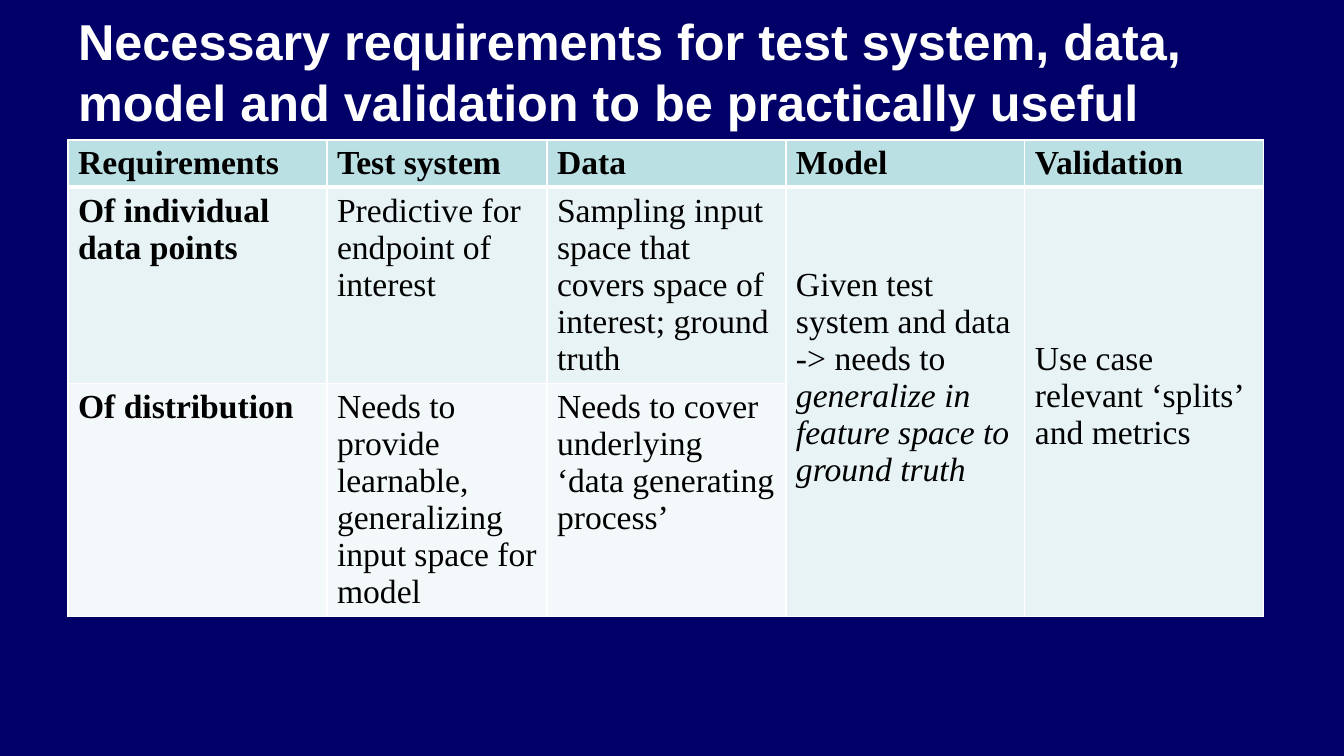
from dataclasses import dataclass

from lxml.etree import SubElement
from pptx import Presentation
from pptx.dml.color import RGBColor
from pptx.enum.text import MSO_ANCHOR, MSO_AUTO_SIZE, PP_ALIGN
from pptx.oxml.ns import qn
from pptx.util import Emu, Pt

EMU_PER_PX = 914400 / 100.8
NAVY, WHITE, BLACK = "000068", "FFFFFF", "000000"
HEADER_FILL, POINTS_FILL, DISTRIBUTION_FILL = "BBE0E3", "E7F3F4", "F3F9FA"
COLUMN_WIDTHS = (259, 220, 239, 239, 239)
ROW_HEIGHTS = (47, 196, 233)
LINE_HEIGHT, CELL_PAD = 37, 5


@dataclass(frozen=True)
class Entry:
    row: int
    column: int
    text: str
    emphasis: str = ""
    bold: bool = False
    rows: int = 1
    lines_down: int = 0


HEADINGS = ("Requirements", "Test system", "Data", "Model", "Validation")
ENTRIES = [Entry(0, column, text, bold=True) for column, text in enumerate(HEADINGS)] + [
    Entry(1, 0, "Of individual data points", bold=True),
    Entry(1, 1, "Predictive for endpoint of interest"),
    Entry(1, 2, "Sampling input space that covers space of interest; ground truth"),
    Entry(1, 3, "Given test system and data -> needs to ",
          "generalize in feature space to ground truth", rows=2, lines_down=2),
    Entry(1, 4, "Use case relevant ‘splits’ and metrics", rows=2, lines_down=4),
    Entry(2, 0, "Of distribution", bold=True),
    Entry(2, 1, "Needs to provide learnable, generalizing input space for model"),
    Entry(2, 2, "Needs to cover underlying ‘data generating process’"),
]


def px(length: int) -> Emu:
    return Emu(round(length * EMU_PER_PX))


def color(value: str) -> RGBColor:
    return RGBColor.from_string(value)


def format_font(font, name: str, size: int, value: str, bold: bool) -> None:
    font.name, font.size, font.bold = name, Pt(size), bold
    font.color.rgb = color(value)


def style_cell(cell, row: int) -> None:
    """White borders, heavier under the header, then the row's fill."""
    properties = cell._tc.get_or_add_tcPr()
    heavy = {0: "lnB", 1: "lnT"}.get(row)
    for side in ("lnL", "lnR", "lnT", "lnB"):
        line = SubElement(properties, qn(f"a:{side}"), w=str(Pt(3 if side == heavy else 1)))
        SubElement(SubElement(line, qn("a:solidFill")), qn("a:srgbClr"), val=WHITE)
    cell.fill.solid()
    cell.fill.fore_color.rgb = color((HEADER_FILL, POINTS_FILL, DISTRIBUTION_FILL)[row])


def write_entry(table, entry: Entry) -> None:
    cell = table.cell(entry.row, entry.column)
    if entry.rows > 1:
        cell.merge(table.cell(entry.row + entry.rows - 1, entry.column))
    cell.margin_top = px(CELL_PAD + entry.lines_down * LINE_HEIGHT)
    paragraph = cell.text_frame.paragraphs[0]
    format_font(paragraph.font, "Times New Roman", 24, BLACK, entry.bold)
    paragraph.add_run().text = entry.text
    if entry.emphasis:
        emphasis = paragraph.add_run()
        emphasis.text = entry.emphasis
        emphasis.font.italic = True


def add_title(slide) -> None:
    title = slide.shapes.title
    title.left, title.top, title.width, title.height = px(68), px(36), px(1196), px(70)
    frame = title.text_frame
    frame.text = ("Necessary requirements for test system, data, "
                  "model and validation to be practically useful")
    frame.word_wrap = True
    frame.auto_size = MSO_AUTO_SIZE.NONE
    frame.vertical_anchor = MSO_ANCHOR.MIDDLE
    paragraph = frame.paragraphs[0]
    paragraph.alignment = PP_ALIGN.LEFT
    format_font(paragraph.font, "Arial", 36, WHITE, True)


def add_requirements(slide) -> None:
    table = slide.shapes.add_table(
        len(ROW_HEIGHTS), len(COLUMN_WIDTHS), px(68), px(140),
        px(sum(COLUMN_WIDTHS)), px(sum(ROW_HEIGHTS))).table
    table.first_row = table.horz_banding = False
    for column, width in zip(table.columns, COLUMN_WIDTHS):
        column.width = px(width)
    for index, (row, height) in enumerate(zip(table.rows, ROW_HEIGHTS)):
        row.height = px(height)
        for cell in row.cells:
            style_cell(cell, index)
    for entry in ENTRIES:
        write_entry(table, entry)


def main() -> None:
    deck = Presentation()
    deck.slide_width, deck.slide_height = px(1344), px(756)
    slide = deck.slides.add_slide(deck.slide_layouts[5])  # title only
    slide.background.fill.solid()
    slide.background.fill.fore_color.rgb = color(NAVY)
    add_title(slide)
    add_requirements(slide)
    deck.save("out.pptx")


if __name__ == "__main__":
    main()
